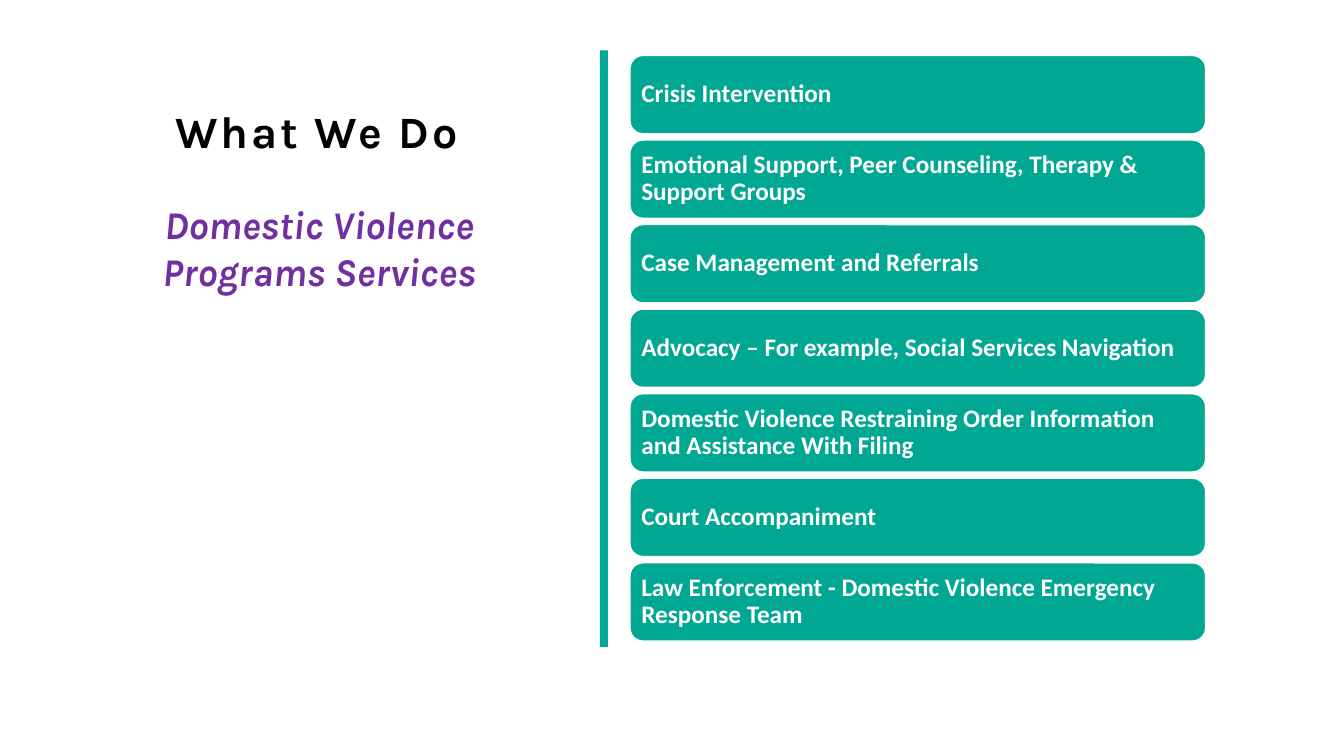
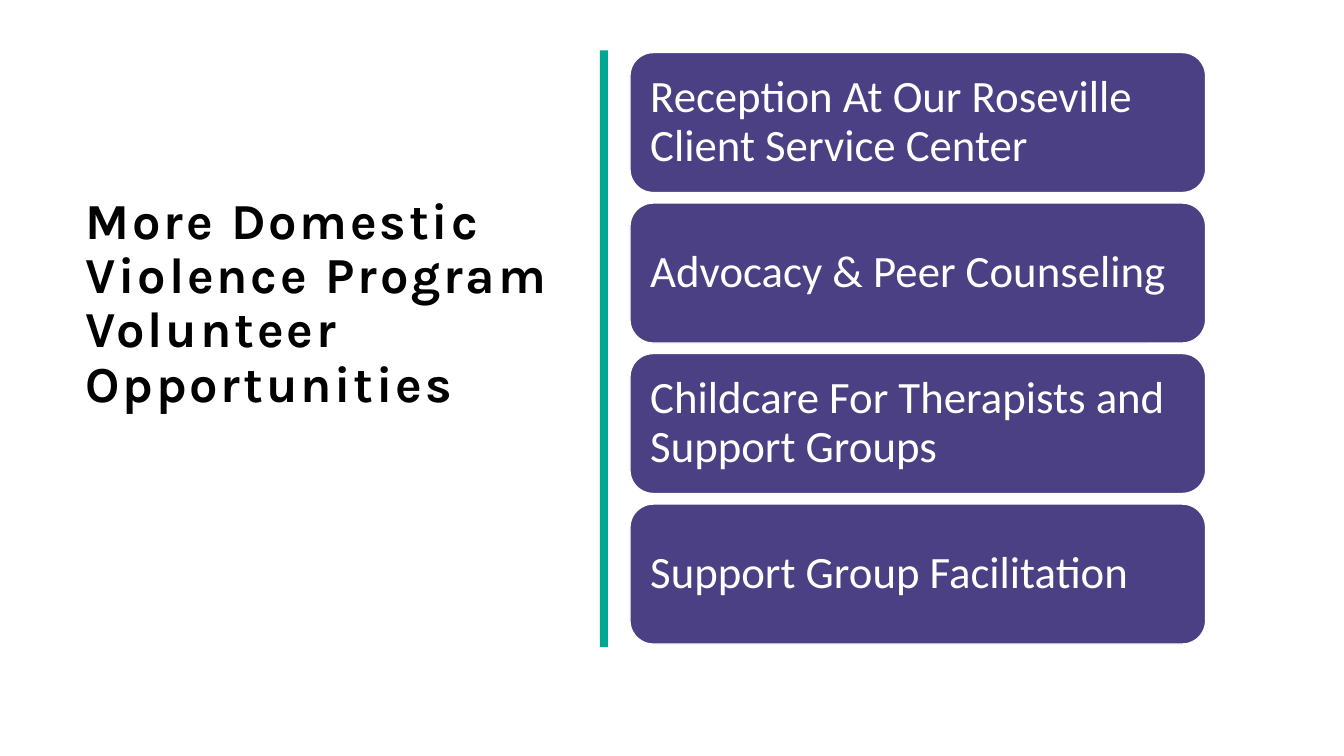
from pptx import Presentation
from pptx.dml.color import RGBColor
from pptx.enum.shapes import MSO_SHAPE
from pptx.enum.text import MSO_ANCHOR, PP_ALIGN
from pptx.util import Pt

RECT, ROUNDED = MSO_SHAPE.RECTANGLE, MSO_SHAPE.ROUNDED_RECTANGLE
TOP, MIDDLE, BOTTOM = MSO_ANCHOR.TOP, MSO_ANCHOR.MIDDLE, MSO_ANCHOR.BOTTOM
LEFT, CENTER = PP_ALIGN.LEFT, PP_ALIGN.CENTER

COLORS = {"teal": "00A793", "indigo": "4B4083", "purple": "7030A0",
          "black": "000000", "white": "FFFFFF"}
HEADING_FONT, BODY_FONT = "Karla", "Calibri"

BAR_LEFT, BAR_TOP, BAR_WIDTH, BAR_HEIGHT = 428.4, 36, 5.8, 426.2
CARD_LEFT, CARD_WIDTH, CARDS_MIDDLE = 450, 411.2, 248.8


def rgb(name):
    return RGBColor.from_string(COLORS[name])


def write(sp, text, *, size, color, font=HEADING_FONT, bold=True, italic=False,
          align=LEFT, anchor=TOP, line_spacing=1.0, tracking=0, inset=None):
    """Fill a shape or text box with one formatted paragraph; tracking is in points."""
    tf = sp.text_frame
    tf.word_wrap = True
    tf.vertical_anchor = anchor
    if inset is not None:
        tf.margin_left = tf.margin_right = Pt(inset)
        tf.margin_top = tf.margin_bottom = Pt(inset)
    p = tf.paragraphs[0]
    p.alignment = align
    p.line_spacing = line_spacing
    r = p.add_run()
    r.text = text
    r.font.name, r.font.size = font, Pt(size)
    r.font.bold, r.font.italic = bold, italic
    r.font.color.rgb = rgb(color)
    if tracking:
        r.font._element.set("spc", str(int(tracking * 100)))


slides = [
    {
        "title": "What We Do", "title_box": (118.1, 73.4, 219.6, 43.2), "title_size": 32,
        "subtitle": "Domestic Violence Programs Services",
        "card_color": "teal", "card_height": 55.9, "gap": 4.5, "size": 18, "bold": True,
        "cards": [
            "Crisis Intervention",
            "Emotional Support, Peer Counseling, Therapy & Support Groups",
            "Case Management and Referrals",
            "Advocacy – For example, Social Services Navigation",
            "Domestic Violence Restraining Order Information and Assistance With Filing",
            "Court Accompaniment",
            "Law Enforcement - Domestic Violence Emergency Response Team",
        ],
    },
    {
        "title": "More Domestic Violence Program Volunteer Opportunities",
        "title_box": (54, 126.7, 347.8, 172.1), "title_size": 36,
        "subtitle": None,
        "card_color": "indigo", "card_height": 100, "gap": 7.5, "size": 32, "bold": False,
        "cards": [
            "Reception At Our Roseville Client Service Center",
            "Advocacy & Peer Counseling",
            "Childcare For Therapists and Support Groups",
            "Support Group Facilitation",
        ],
    },
]

prs = Presentation()
prs.slide_width, prs.slide_height = Pt(960), Pt(540)

for content in slides:
    s = prs.slides.add_slide(prs.slide_layouts[6])

    bar = s.shapes.add_shape(RECT, Pt(BAR_LEFT), Pt(BAR_TOP), Pt(BAR_WIDTH), Pt(BAR_HEIGHT))
    bar.shadow.inherit = False
    bar.fill.solid()
    bar.fill.fore_color.rgb = rgb("teal")
    bar.line.fill.background()

    title = s.shapes.add_textbox(*map(Pt, content["title_box"]))
    write(title, content["title"], size=content["title_size"], color="black",
          anchor=BOTTOM, line_spacing=0.9, tracking=2)

    if content["subtitle"]:
        subtitle = s.shapes.add_textbox(Pt(82), Pt(139.7), Pt(291.6), Pt(90.7))
        write(subtitle, content["subtitle"], size=28, color="purple",
              italic=True, align=CENTER)

    # The stack of cards is centred on one line, whatever its length
    height, gap = content["card_height"], content["gap"]
    pitch = height + gap
    top = CARDS_MIDDLE - (len(content["cards"]) * pitch - gap) / 2
    for i, text in enumerate(content["cards"]):
        card = s.shapes.add_shape(ROUNDED, Pt(CARD_LEFT), Pt(top + i * pitch),
                                  Pt(CARD_WIDTH), Pt(height))
        card.shadow.inherit = False
        card.fill.solid()
        card.fill.fore_color.rgb = rgb(content["card_color"])
        card.line.color.rgb = rgb("white")
        card.line.width = Pt(1)
        write(card, text, size=content["size"], color="white", font=BODY_FONT,
              bold=content["bold"], anchor=MIDDLE, line_spacing=0.9,
              inset=0.3 * content["size"])

prs.save("out.pptx")
